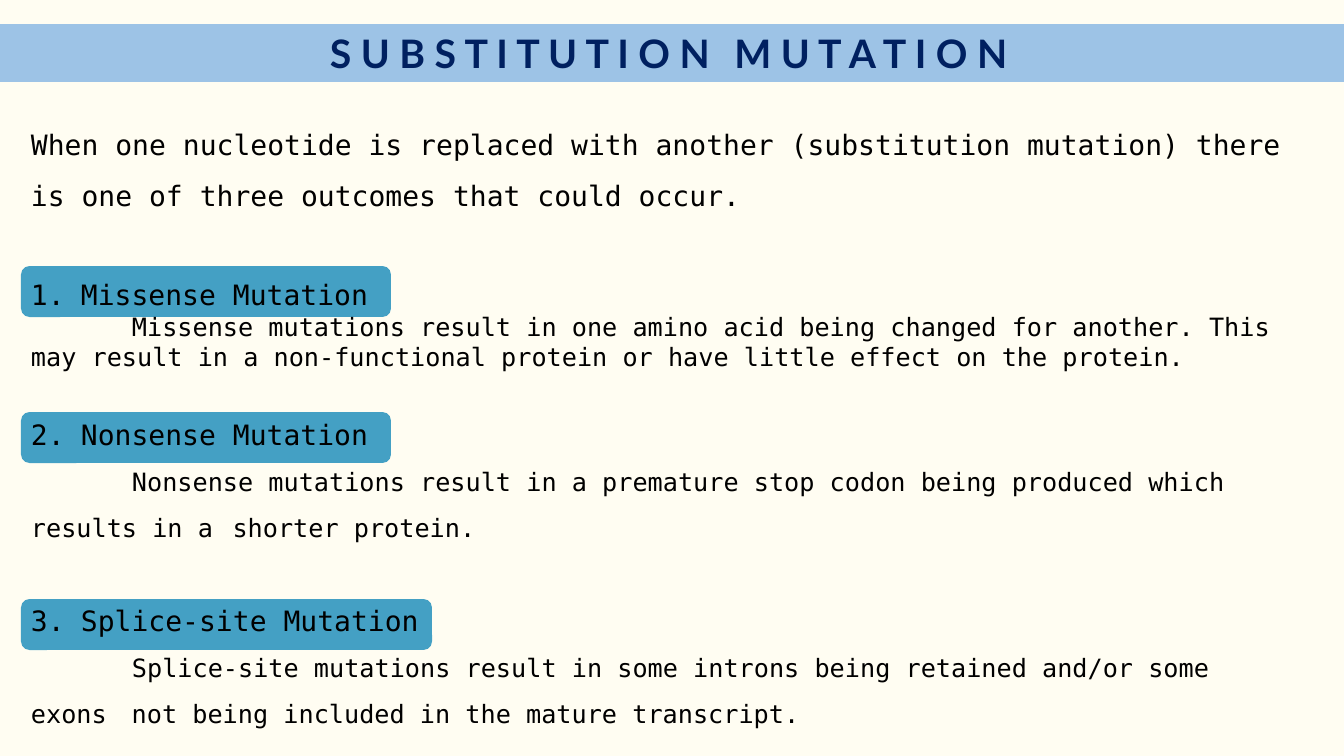
import pptx
import pptx.dml.color
import pptx.enum.shapes
import pptx.enum.text
import pptx.oxml.ns
import pptx.util
from lxml import etree

PX = 914400 / 100.8
COLOURS = {
    "page": "FFFDF2",
    "banner": "9DC3E6",
    "heading": "002060",
    "label": "44A0C4",
    "body": "000000",
}
BODY_FONT = "DejaVu Sans Mono"


def px(length):
    return pptx.util.Emu(round(length * PX))


def add_run(paragraph, text, font, size, colour, bold=False):
    run = paragraph.add_run()
    run.text = text
    run.font.name = font
    run.font.size = pptx.util.Pt(size)
    run.font.bold = bold
    run.font.color.rgb = pptx.dml.color.RGBColor.from_string(COLOURS[colour])
    return run


presentation = pptx.Presentation()
presentation.slide_width = px(1344)
presentation.slide_height = px(756)
slide = presentation.slides.add_slide(presentation.slide_layouts[5])
slide.background.fill.solid()
slide.background.fill.fore_color.rgb = pptx.dml.color.RGBColor.from_string(COLOURS["page"])

banner = slide.shapes.title
banner.left, banner.top, banner.width, banner.height = px(0), px(24), px(1344), px(58)
banner.fill.solid()
banner.fill.fore_color.rgb = pptx.dml.color.RGBColor.from_string(COLOURS["banner"])
banner.text_frame.auto_size = pptx.enum.text.MSO_AUTO_SIZE.NONE
banner.text_frame.vertical_anchor = pptx.enum.text.MSO_ANCHOR.MIDDLE
banner.text_frame.margin_left = px(10)
banner.text_frame.margin_right = px(17)
heading = banner.text_frame.paragraphs[0]
heading.alignment = pptx.enum.text.PP_ALIGN.CENTER
add_run(heading, "S U B S T I T U T I O N", "Lato", 28, "heading", True)
word_gap = add_run(heading, " ", "Lato", 28, "heading", True)
word_gap.font._element.set("spc", "1080")
add_run(heading, "M U T A T I O N", "Lato", 28, "heading", True)

for top, width in [(266, 370), (412, 370), (599, 411)]:
    label = slide.shapes.add_shape(
        pptx.enum.shapes.MSO_SHAPE.ROUNDED_RECTANGLE, px(21), px(top), px(width), px(51))
    label.shadow.inherit = False
    label.fill.solid()
    label.fill.fore_color.rgb = pptx.dml.color.RGBColor.from_string(COLOURS["label"])
    label.line.fill.background()

explanation = slide.shapes.add_textbox(px(21), px(106), px(1281), px(694)).text_frame
explanation.word_wrap = True
explanation.auto_size = pptx.enum.text.MSO_AUTO_SIZE.SHAPE_TO_FIT_TEXT
introduction = explanation.paragraphs[0]
introduction.line_spacing = 1.5
add_run(introduction,
        "When one nucleotide is replaced with another (substitution mutation) "
        "there is one of three outcomes that could occur.",
        BODY_FONT, 20, "body")

outcomes = [
    ("Missense Mutation", 35, 1.0,
     "Missense mutations result in one amino acid being changed for another. "
     "This may result in a non-functional protein or have little effect on the protein."),
    ("Nonsense Mutation", 21, 1.5,
     "Nonsense mutations result in a premature stop codon being produced which "
     "results in a \tshorter protein."),
    ("Splice-site Mutation", 32, 1.5,
     "Splice-site mutations result in some introns being retained and/or some "
     "exons \tnot being included in the mature transcript."),
]
for number, (mutation, gap, spacing, effect) in enumerate(outcomes, 1):
    outcome = explanation.add_paragraph()
    outcome.line_spacing = 1.5
    outcome.space_before = pptx.util.Pt(gap)
    add_run(outcome, mutation, BODY_FONT, 20, "body")
    outcome_format = outcome._p.get_or_add_pPr()
    outcome_format.set("marL", str(px(50)))
    outcome_format.set("indent", str(-px(50)))
    etree.SubElement(outcome_format, pptx.oxml.ns.qn("a:buFont"), typeface=BODY_FONT)
    etree.SubElement(outcome_format, pptx.oxml.ns.qn("a:buAutoNum"),
                     type="arabicPeriod", startAt=str(number))

    description = explanation.add_paragraph()
    description.line_spacing = spacing
    description_format = description._p.get_or_add_pPr()
    description_format.set("marL", "0")
    description_format.set("indent", str(px(101)))
    add_run(description, effect, BODY_FONT, 18, "body")

presentation.save("out.pptx")
